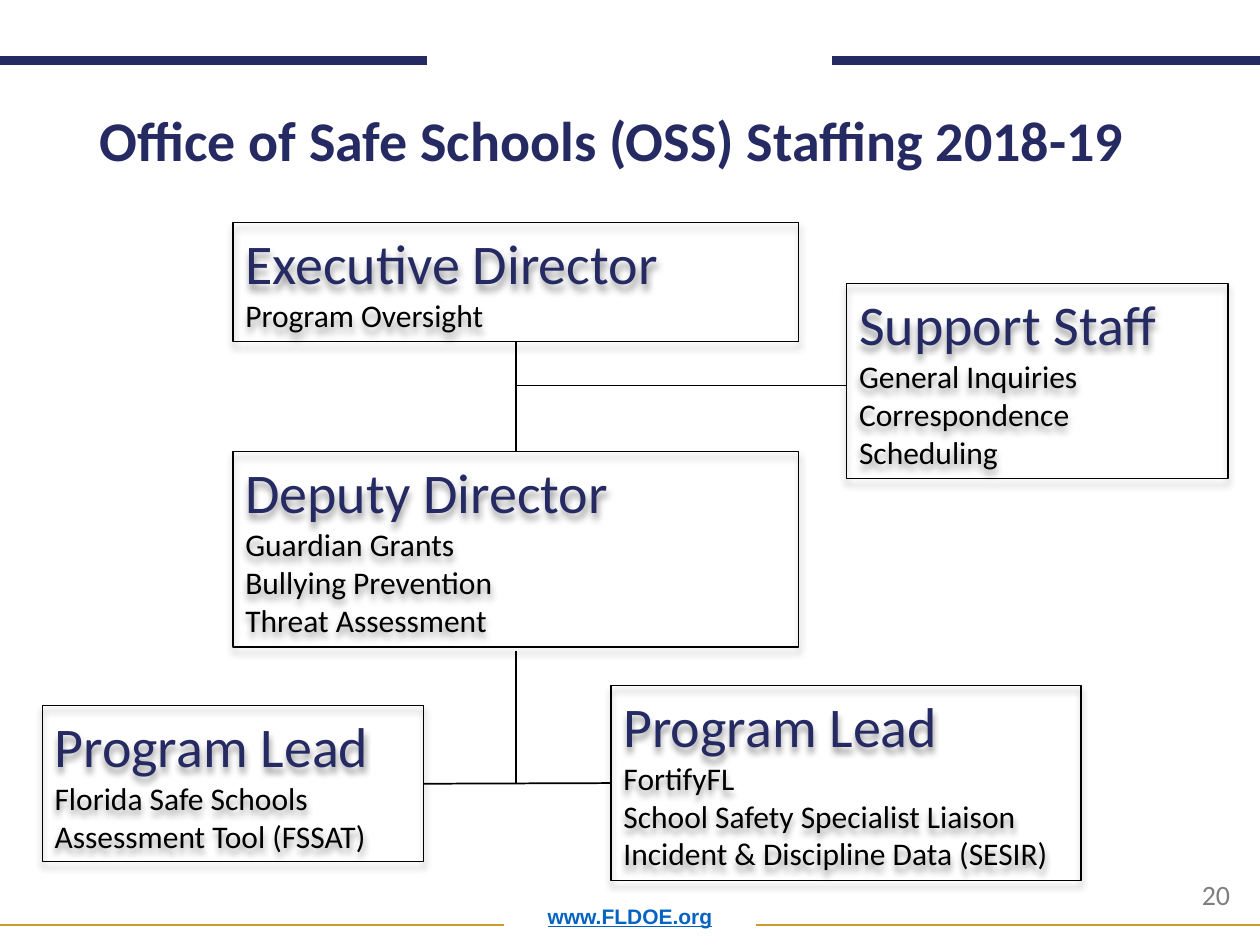
import pptx
import pptx.util
import pptx.dml.color
import pptx.enum.shapes
import pptx.enum.text
import pptx.oxml
import lxml.etree

Pt = pptx.util.Pt
Align = pptx.enum.text.PP_ALIGN
Anchor = pptx.enum.text.MSO_ANCHOR
AutoSize = pptx.enum.text.MSO_AUTO_SIZE
NAVY, GOLD, BLACK = "262A63", "CD9D2C", "000000"
DRAWING = "http://schemas.openxmlformats.org/drawingml/2006/main"


def color(value):
    return pptx.dml.color.RGBColor.from_string(value)


def add_words(paragraph, words, size, ink, font="Calibri"):
    run = paragraph.add_run()
    run.text = words
    run.font.name = font
    run.font.size = Pt(size)
    run.font.color.rgb = color(ink)
    return run


deck = pptx.Presentation()
deck.slide_width, deck.slide_height = Pt(720), Pt(540)
slide = deck.slides.add_slide(deck.slide_layouts[5])

heading = slide.shapes.title
heading.left, heading.top, heading.width, heading.height = Pt(49.7), Pt(61.9), Pt(630.7), Pt(41)
heading.text_frame.auto_size = AutoSize.NONE
heading.text_frame.vertical_anchor = Anchor.BOTTOM
heading_line = heading.text_frame.paragraphs[0]
heading_line.alignment = Align.LEFT
heading_line.line_spacing = 0.9
add_words(heading_line, "Office of Safe Schools (OSS) Staffing 2018-19", 32, NAVY).font.bold = True

website = slide.shapes.add_textbox(Pt(49.7), Pt(504), Pt(620.6), Pt(30.2)).text_frame
website.word_wrap = True
website.vertical_anchor = Anchor.BOTTOM
website_line = website.paragraphs[0]
website_line.alignment = Align.CENTER
website_line.line_spacing = 0.9
address = add_words(website_line, "www.FLDOE.org", 12, "0563C1", "Arial")
address.font.bold = True
address.font.underline = True

page_number = slide.shapes.add_textbox(Pt(679.7), Pt(498.2), Pt(37.4), Pt(26.6)).text_frame
page_number.word_wrap = True
add_words(page_number.paragraphs[0], "20", 16, "7F7F7F")

positions = [
    ("Executive Director", ["Program Oversight"], 133.1, 127.3, 323.3, 67.9),
    ("Program Lead", ["FortifyFL", "School Safety Specialist Liaison",
                      "Incident & Discipline Data (SESIR)"], 349.2, 391.7, 268.6, 111.6),
    ("Program Lead", ["Florida Safe Schools Assessment Tool (FSSAT)"], 24.1, 403.2, 217.9, 89.3),
    ("Deputy Director", ["Guardian Grants", "Bullying Prevention", "Threat Assessment"],
     133.1, 258.1, 323.3, 111.6),
    ("Support Staff", ["General Inquiries", "Correspondence", "Scheduling"],
     483.8, 162, 217.9, 111.6),
]
boxes = []
for role, duties, left, top, width, height in positions:
    box = slide.shapes.add_shape(pptx.enum.shapes.MSO_SHAPE.RECTANGLE,
                                 Pt(left), Pt(top), Pt(width), Pt(height))
    box.fill.background()
    box.line.color.rgb = color(BLACK)
    box.line.width = Pt(0.75)
    box.shadow.inherit = False
    effects = box._element.spPr.find(f"{{{DRAWING}}}effectLst")
    effects.append(pptx.oxml.parse_xml(
        f'<a:outerShdw xmlns:a="{DRAWING}" blurRad="{Pt(4)}" dist="{Pt(3)}" dir="5400000" '
        f'rotWithShape="0"><a:srgbClr val="{BLACK}"><a:alpha val="40000"/></a:srgbClr></a:outerShdw>'))
    frame = box.text_frame
    frame.word_wrap = True
    frame.auto_size = AutoSize.SHAPE_TO_FIT_TEXT
    frame.vertical_anchor = Anchor.TOP
    add_words(frame.paragraphs[0], role, 32, NAVY)
    for duty in duties:
        add_words(frame.add_paragraph(), duty, 18, BLACK)
    for paragraph in frame.paragraphs:
        paragraph.alignment = Align.LEFT
    boxes.append(box)
executive, data_lead, assessment_lead, deputy, support = boxes

trunk, lead_level, support_level = 294.75, 447.7, 220.3
links = [
    (0, 34.6, 244.1, 34.6, NAVY, 5, None, None),
    (475.2, 34.6, 720, 34.6, NAVY, 5, None, None),
    (0, 528.5, 288, 528.5, GOLD, 1, None, None),
    (432, 528.5, 720, 528.5, GOLD, 1, None, None),
    (349.2, lead_level, 242, lead_level, BLACK, 1, (data_lead, 1), (assessment_lead, 3)),
    (trunk, 195.2, trunk, 258.1, BLACK, 1, (executive, 2), (deputy, 0)),
    (trunk, 372.2, trunk, lead_level, BLACK, 1, None, None),
    (483.8, support_level, trunk, support_level, BLACK, 1, None, None),
]
for x1, y1, x2, y2, ink, weight, start, end in links:
    link = slide.shapes.add_connector(pptx.enum.shapes.MSO_CONNECTOR.STRAIGHT,
                                      Pt(x1), Pt(y1), Pt(x2), Pt(y2))
    link.line.color.rgb = color(ink)
    link.line.width = Pt(weight)
    lxml.etree.SubElement(link._element.spPr, f"{{{DRAWING}}}effectLst")
    if start:
        link.begin_connect(*start)
    if end:
        link.end_connect(*end)

deck.save("out.pptx")
